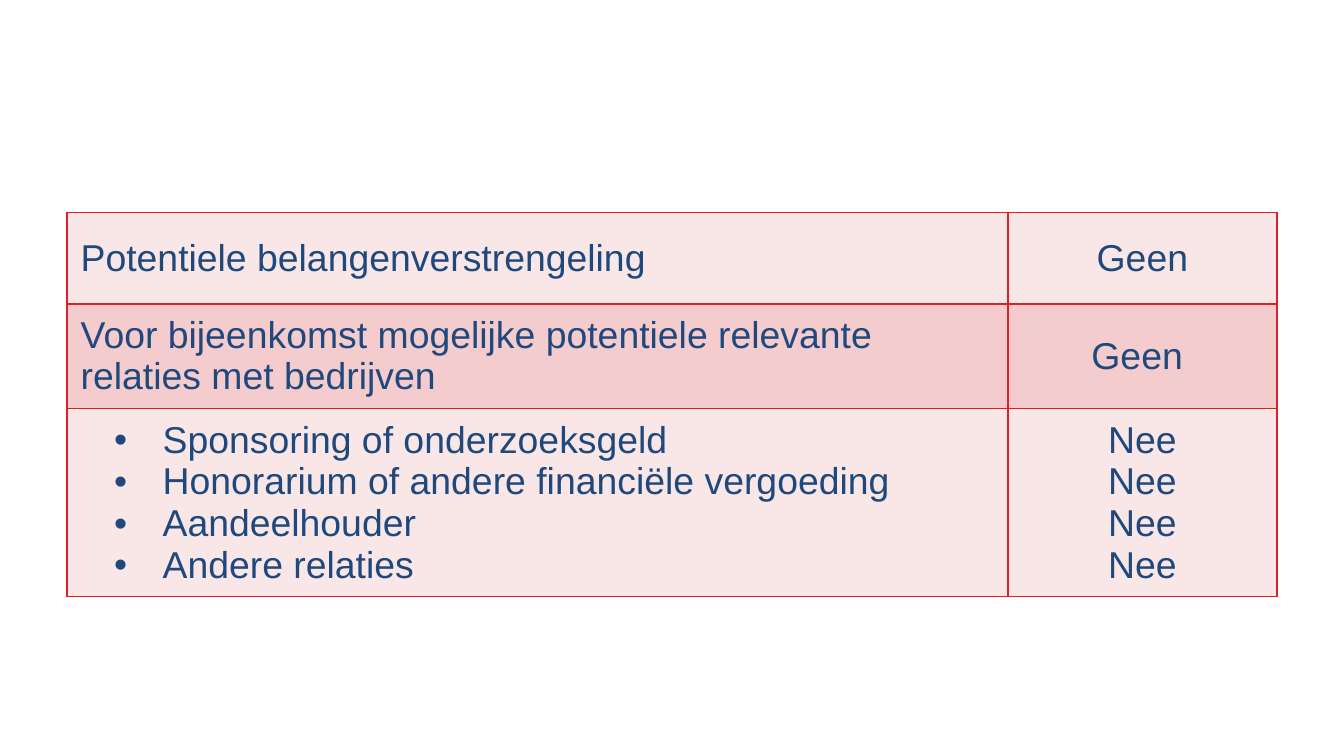
import lxml.etree
import pptx
import pptx.dml.color
import pptx.enum.text
import pptx.oxml.ns
import pptx.util
from dataclasses import dataclass

Inches = pptx.util.Inches
RGB = pptx.dml.color.RGBColor
ALIGN = pptx.enum.text.PP_ALIGN
qn = pptx.oxml.ns.qn


@dataclass(frozen=True)
class Theme:
    font: str = "Arial"
    size: int = 20
    text: str = "1F497D"
    border: str = "E11F27"
    border_pt: float = 1
    bands: tuple = ("F9E7E8", "F4CCCD")


class SlideBuilder:
    def __init__(self, prs, theme):
        self.theme = theme
        self.s = prs.slides.add_slide(prs.slide_layouts[6])

    def borders(self, cell):
        tcPr = cell._tc.get_or_add_tcPr()
        width = str(pptx.util.Pt(self.theme.border_pt))
        for side in ("a:lnL", "a:lnR", "a:lnT", "a:lnB"):
            ln = lxml.etree.SubElement(tcPr, qn(side), w=width)
            fill = lxml.etree.SubElement(ln, qn("a:solidFill"))
            lxml.etree.SubElement(fill, qn("a:srgbClr"), val=self.theme.border)

    def bullet(self, p):
        pPr = p._p.get_or_add_pPr()
        pPr.set("marL", str(Inches(0.61)))
        pPr.set("indent", str(Inches(-0.36)))
        lxml.etree.SubElement(pPr, qn("a:buFont"), typeface=self.theme.font)
        lxml.etree.SubElement(pPr, qn("a:buChar"), char="•")

    def cell(self, cell, lines, color, align, bulleted):
        # Borders come before the fill in the cell properties
        self.borders(cell)
        cell.fill.solid()
        cell.fill.fore_color.rgb = RGB.from_string(color)
        cell.vertical_anchor = pptx.enum.text.MSO_ANCHOR.MIDDLE
        tf = cell.text_frame
        font = {"name": self.theme.font, "size": pptx.util.Pt(self.theme.size)}
        for i, line in enumerate(lines):
            p = tf.paragraphs[0] if i == 0 else tf.add_paragraph()
            p.alignment = align
            if bulleted:
                self.bullet(p)
            r = p.add_run()
            r.text = line
            for key, value in font.items():
                setattr(r.font, key, value)
            r.font.color.rgb = RGB.from_string(self.theme.text)

    def table(self, left, top, widths, heights, rows):
        frame = self.s.shapes.add_table(
            len(heights), len(widths), Inches(left), Inches(top),
            Inches(sum(widths)), Inches(sum(heights)))
        table = frame.table
        for flag, value in {"first_row": False, "horz_banding": False}.items():
            setattr(table, flag, value)
        for column, width in zip(table.columns, widths):
            column.width = Inches(width)
        for row, height in zip(table.rows, heights):
            row.height = Inches(height)
        aligns = (ALIGN.LEFT, ALIGN.CENTER)
        for i, row in enumerate(rows):
            color = self.theme.bands[i % 2]
            for j, lines in enumerate(row):
                bulleted = j == 0 and len(lines) > 1
                self.cell(table.cell(i, j), lines, color, aligns[j], bulleted)


def main():
    # Widescreen 16:9 slide
    prs = pptx.Presentation()
    prs.slide_width = Inches(10)
    prs.slide_height = Inches(10 * 9 / 16)
    builder = SlideBuilder(prs, Theme())

    # Disclosure table: one list of lines per cell
    relations = ["Sponsoring of onderzoeksgeld",
                 "Honorarium of andere financiële vergoeding",
                 "Aandeelhouder",
                 "Andere relaties"]
    rows = [
        (["Potentiele belangenverstrengeling"], ["Geen"]),
        (["Voor bijeenkomst mogelijke potentiele relevante "
          "relaties met bedrijven"], ["Geen "]),
        (relations, ["Nee"] * len(relations)),
    ]
    builder.table(0.5, 1.58, (7, 2), (0.68, 0.78, 1.4), rows)

    prs.save("out.pptx")


if __name__ == "__main__":
    main()
